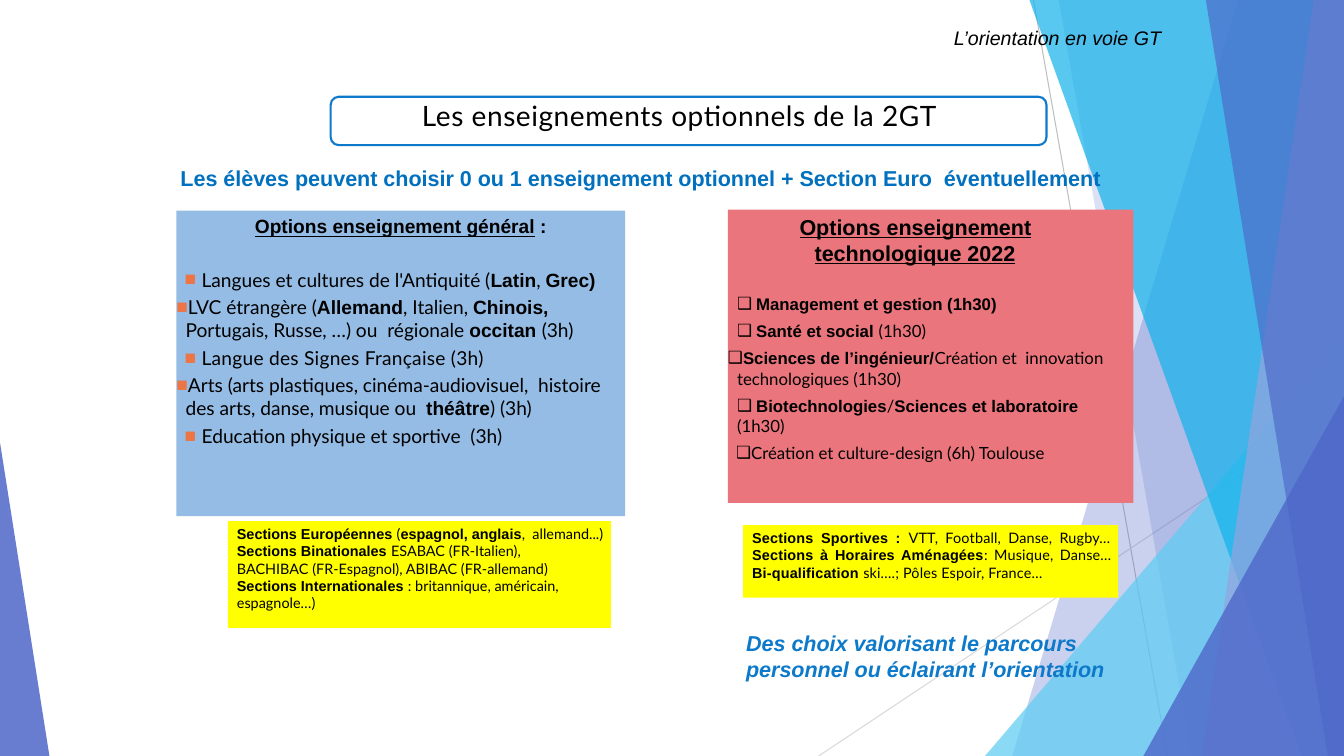
import pptx
import pptx.util
import pptx.dml.color
import pptx.enum.shapes
import pptx.enum.text
import pptx.oxml.ns
import lxml.etree

Inches = pptx.util.Inches
Pt = pptx.util.Pt
qn = pptx.oxml.ns.qn
SHAPES = pptx.enum.shapes.MSO_SHAPE
ALIGN = pptx.enum.text.PP_ALIGN


def paint(fill, color):
    fill.solid()
    fill.fore_color.rgb = pptx.dml.color.RGBColor.from_string(color)


def write(paragraph, text, size, color="000000", before=0, left=0, indent=0,
          align=ALIGN.LEFT, spacing=0, italic=False, bullet=None, bullet_color="000000"):
    paragraph.alignment = align
    paragraph.space_before = Pt(before)
    properties = paragraph._p.get_or_add_pPr()
    properties.set("marL", str(Inches(left)))
    properties.set("indent", str(Inches(indent)))
    if bullet:
        bullet_fill = lxml.etree.SubElement(properties, qn("a:buClr"))
        lxml.etree.SubElement(bullet_fill, qn("a:srgbClr"), val=bullet_color)
        lxml.etree.SubElement(properties, qn("a:buChar"), char=bullet)
    else:
        lxml.etree.SubElement(properties, qn("a:buNone"))
    for position, part in enumerate(text.split("*")):
        if not part:
            continue
        bold = position % 2 == 1
        for line_number, line in enumerate(part.split("\v")):
            if line_number:
                paragraph.add_line_break()
            run = paragraph.add_run()
            run.text = line
            run.font.name = "Arial" if bold or italic else "Lato"
            run.font.size = Pt(size)
            run.font.bold = bold
            run.font.italic = italic
            paint(run.font.fill, color)
            if spacing:
                run.font._element.set("spc", str(spacing))


presentation = pptx.Presentation()
presentation.slide_width = Inches(13.33)
presentation.slide_height = Inches(7.5)
slide = presentation.slides.add_slide(presentation.slide_layouts[3])
shapes = slide.shapes

for x1, y1, x2, y2, color in [
    (10.25, 0, 11.58, 7.5, "BFBFBF"),
    (13.33, 4.03, 8.12, 7.5, "D9D9D9"),
]:
    connector = shapes.add_connector(pptx.enum.shapes.MSO_CONNECTOR.STRAIGHT,
                                     Inches(x1), Inches(y1), Inches(x2), Inches(y2))
    paint(connector.line.fill, color)
    connector.line.width = Pt(0.75)
    lxml.etree.SubElement(connector._element.spPr, qn("a:effectLst"))

facets = [
    ("band", 12.28, 10.04, "4E67C8", 30),
    ("band", 10.5, 11.82, "4E67C8", 20),
    ("triangle", 9.77, 3.33, 3.56, 1, "5ECCF3", 72),
    ("band", 10.21, 12.91, "12B2EB", 70),
    ("band", 13.03, 11.92, "95A4DE", 70),
    ("band", 11.96, 13.17, "4E67C8", 65),
    ("triangle", 11.34, 3.93, 1.99, 1, "4E67C8", 80),
    ("triangle", 0, 4.39, 0.49, 0, "4E67C8", 85),
]
for kind, *geometry, color, opacity in facets:
    if kind == "band":
        top_x, bottom_x = geometry
        builder = shapes.build_freeform(Inches(top_x), 0)
        builder.add_line_segments([(Inches(x), Inches(y)) for x, y in
                                   [(13.33, 0), (13.33, 7.5), (bottom_x, 7.5)]])
        facet = builder.convert_to_shape()
    else:
        left, top, width, apex = geometry
        facet = shapes.add_shape(SHAPES.ISOSCELES_TRIANGLE, Inches(left), Inches(top),
                                 Inches(width), Inches(7.5 - top))
        facet.adjustments[0] = apex
    facet.shadow.inherit = False
    facet.line.fill.background()
    paint(facet.fill, color)
    color_element = facet._element.spPr.find(".//" + qn("a:srgbClr"))
    lxml.etree.SubElement(color_element, qn("a:alpha"), val=str(opacity * 1000))

title_frame = shapes.add_shape(SHAPES.ROUNDED_RECTANGLE, Inches(3.28), Inches(0.96),
                               Inches(7.1), Inches(0.48))
title_frame.shadow.inherit = False
title_frame.fill.background()
paint(title_frame.line.fill, "0D79CA")
title_frame.line.width = Pt(1.5)

title, general, technological = list(slide.placeholders)
for placeholder in (title, general, technological):
    shapes._spTree.append(placeholder._element)

general_style = dict(size=13.7, bullet="■", bullet_color="ED7444", indent=-0.17)
technological_style = dict(size=12, bullet="❑", indent=-0.19)
yellow_style = dict(size=10.3, left=0.09)
blocks = [
    (title, (3.28, 0.97, 6.92, 1.26), None, 0.01, [
        ("Les enseignements optionnels de la 2GT",
         dict(size=20, before=0.8, align=ALIGN.CENTER, spacing=40))]),
    (None, (1.78, 1.63, 9.15, 0.27), None, 0.01, [
        ("*Les élèves peuvent choisir 0 ou 1 enseignement optionnel + Section Euro  éventuellement*",
         dict(size=15.4, color="0070BF", before=0.8, left=0.01))]),
    (general, (1.75, 2.09, 4.45, 3.03), "95BCE4", 0.04, [
        ("*Options enseignement général** :*", dict(size=13.7, before=2.6, align=ALIGN.CENTER)),
        ("Langues et cultures de l'Antiquité (*Latin*, *Grec)*",
         dict(general_style, left=0.25, before=21.5)),
        ("LVC étrangère (*Allemand*, Italien, *Chinois, *Portugais, Russe, …) ou  régionale *occitan *(3h)",
         dict(general_style, left=0.09, before=3.3)),
        ("Langue des Signes Française (3h)",
         dict(general_style, left=0.25, before=3.3, spacing=20)),
        ("Arts (arts plastiques, cinéma-audiovisuel,  histoire des arts, danse, musique ou  *théâtre*) (3h)",
         dict(general_style, left=0.09, before=3.3)),
        ("Education physique et sportive  (3h)",
         dict(general_style, left=0.25, before=3.3))]),
    (technological, (7.22, 2.08, 4.02, 2.91), "EB757C", 0.04, [
        ("*Options enseignement technologique 2022*",
         dict(size=15.4, before=2.6, left=0.86, indent=-0.15)),
        ("*Management et gestion (1h30)*", dict(technological_style, left=0.28, before=20)),
        ("*Santé et social *(1h30)", dict(technological_style, left=0.28, before=5.1)),
        ("*Sciences de l’ingénieur/*Création et  innovation technologiques (1h30)",
         dict(technological_style, left=0.09, before=5.1)),
        ("*Biotechnologies*/*Sciences et laboratoire*",
         dict(technological_style, left=0.28, before=5.1)),
        ("(1h30)", dict(size=12, left=0.09)),
        ("Création et culture-design (6h) Toulouse",
         dict(technological_style, left=0.23, indent=-0.15, before=5.1))]),
    (None, (2.26, 5.17, 3.8, 1.06), "FFFF00", 0.04, [
        ("*Sections Européennes *(*espagnol, anglais*,  allemand...)", dict(yellow_style, before=2.6)),
        ("*Sections Binationales *ESABAC (FR-Italien),\vBACHIBAC (FR-Espagnol), ABIBAC (FR-allemand)  "
         "*Sections Internationales *: britannique, américain,  espagnole…)", yellow_style)]),
    (None, (7.37, 5.21, 3.72, 0.72), "FFFF00", 0.04, [
        ("*Sections Sportives : *VTT, Football, Danse, Rugby…  *Sections à Horaires Aménagées*: "
         "Musique, Danse…  *Bi-qualification *ski….; Pôles Espoir, France…",
         dict(yellow_style, before=2.6, align=ALIGN.JUSTIFY, spacing=10))]),
    (None, (7.39, 6.24, 3.59, 0.52), None, 0.01, [
        ("*Des choix valorisant le parcours  personnel ou éclairant l’orientation*",
         dict(size=15.4, color="0D79CA", before=0.8, left=0.01, italic=True))]),
    (None, (9.46, 0.21, 2.42, 0.33), None, 0.05, [
        ("L’orientation en voie GT", dict(size=14, italic=True))]),
]
for shape, box, fill, top_inset, paragraphs in blocks:
    left, top, width, height = [Inches(value) for value in box]
    if shape is None:
        shape = shapes.add_textbox(left, top, width, height)
    shape.left, shape.top, shape.width, shape.height = left, top, width, height
    if fill:
        paint(shape.fill, fill)
    frame = shape.text_frame
    frame.word_wrap = True
    frame.auto_size = pptx.enum.text.MSO_AUTO_SIZE.NONE
    frame.vertical_anchor = pptx.enum.text.MSO_ANCHOR.TOP
    frame.margin_left = frame.margin_right = frame.margin_bottom = 0
    frame.margin_top = Inches(top_inset)
    for index, (text, style) in enumerate(paragraphs):
        paragraph = frame.add_paragraph() if index else frame.paragraphs[0]
        write(paragraph, text, **style)

for option_box in (general, technological):
    option_box.text_frame.paragraphs[0].runs[0].font.underline = True

presentation.save("out.pptx")
